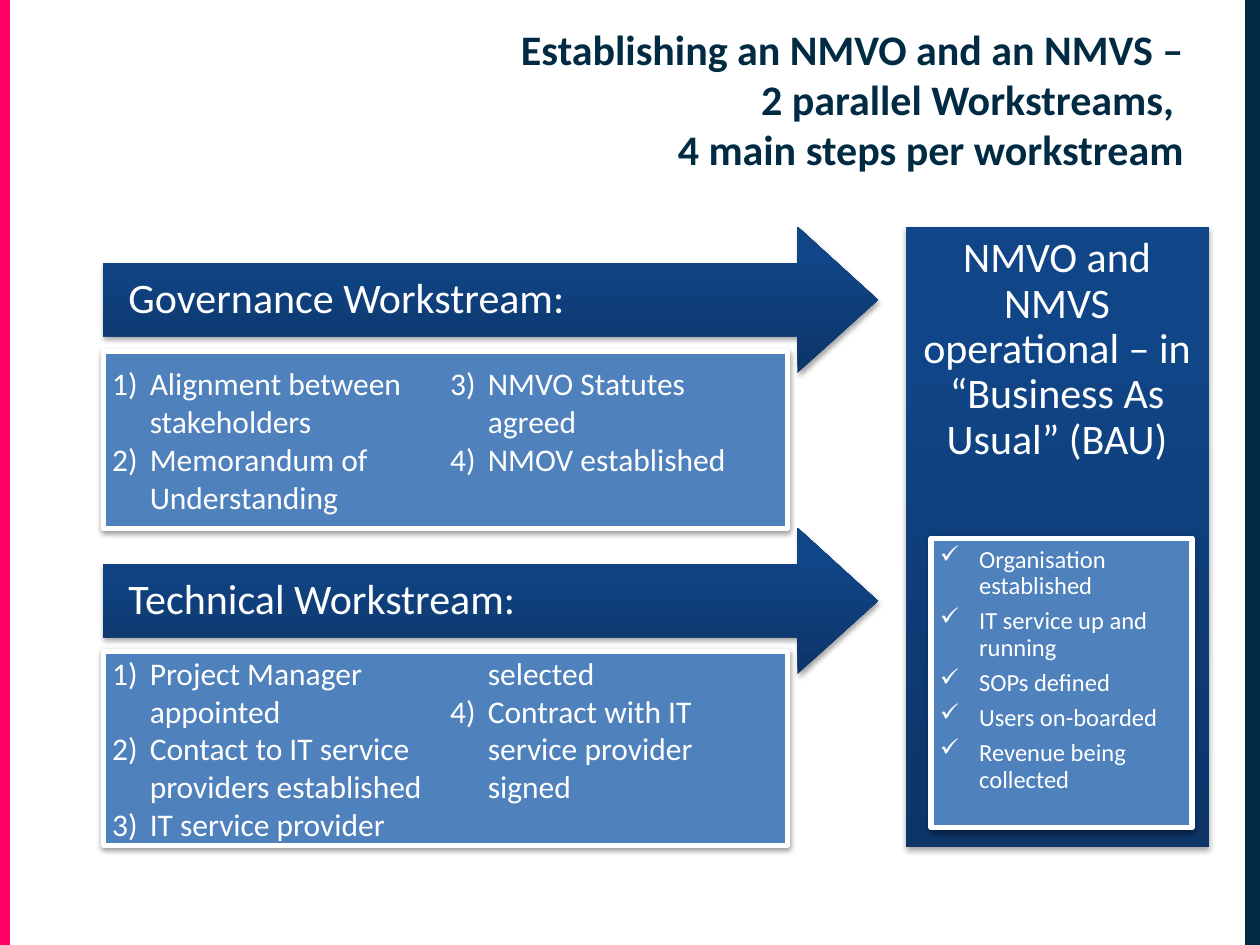
from copy import deepcopy

from lxml.etree import SubElement
from pptx import Presentation
from pptx.dml.color import RGBColor
from pptx.enum.shapes import MSO_SHAPE as Shape
from pptx.enum.text import MSO_ANCHOR as Anchor, PP_ALIGN as Align
from pptx.oxml.ns import qn
from pptx.util import Cm, Pt

TITLE = "Establishing an NMVO and an NMVS – 2 parallel Workstreams, \v4 main steps per workstream"
WORKSTREAMS = [
    {"name": "Governance Workstream:", "arrow_top": 4.57, "list_top": 7.09, "list_height": 3.56,
     "steps": ["Alignment between stakeholders", "Memorandum of Understanding",
               "NMVO Statutes agreed", "NMOV established"]},
    {"name": "Technical Workstream:", "arrow_top": 10.64, "list_top": 13.13, "list_height": 3.91,
     "steps": ["Project Manager appointed", "Contact to IT service providers established",
               "IT service provider selected", "Contract with IT service provider signed"]},
]
GOAL = "NMVO and NMVS operational – in “Business As Usual” (BAU)"
CHECKS = ["Organisation established", "IT service up and running", "SOPs defined",
          "Users on-boarded", "Revenue being collected"]

FONT = "Calibri"
NAVY, PINK, WHITE, BLUE = "002B43", "FF0066", "FFFFFF", "4F81BD"
GRADIENT = [(0, "0D3568"), (0.8, "104587"), (1, "0E458A")]
LEFT, ARROW_WIDTH, ARROW_HEIGHT, LIST_WIDTH = 2.08, 15.62, 2.95, 13.79


def color(value):
    return RGBColor.from_string(value)


def add_box(page, kind, left, top, width, height, fill=None, outlined=False):
    box = page.shapes.add_shape(kind, Cm(left), Cm(top), Cm(width), Cm(height))
    box.shadow.inherit = False
    if fill:
        box.fill.solid()
        box.fill.fore_color.rgb = color(fill)
    if outlined:
        box.line.color.rgb = color(WHITE)
        box.line.width = Pt(3)
    else:
        box.line.fill.background()
    return box


def add_shadow(box, opacity, distance):
    effects = box._element.spPr.find(qn("a:effectLst"))
    shadow = SubElement(effects, qn("a:outerShdw"), blurRad=str(Pt(3.1)),
                        dist=str(Pt(distance)), dir="5400000", rotWithShape="0")
    tint = SubElement(shadow, qn("a:srgbClr"), val="000000")
    SubElement(tint, qn("a:alpha"), val=str(opacity * 1000))


def shade(box):
    box.fill.gradient()
    box.fill.gradient_angle = 90
    stop_list = box._element.spPr.find(qn("a:gradFill")).find(qn("a:gsLst"))
    stop_list.append(deepcopy(stop_list[-1]))
    for stop, (position, value) in zip(box.fill.gradient_stops, GRADIENT):
        stop.position = position
        stop.color.rgb = color(value)
    add_shadow(box, 35, 1.8)


def write(box, lines, size, value=WHITE, bold=False, align=Align.LEFT, anchor=Anchor.TOP,
          insets=(0.18, 0.18, 0.18, 0.18), spacing=None, after=0, bullet=None, indent=0, columns=1):
    frame = box.text_frame
    frame.word_wrap = True
    frame.vertical_anchor = anchor
    frame.margin_left, frame.margin_top, frame.margin_right, frame.margin_bottom = map(Cm, insets)
    if columns > 1:
        frame._txBody.bodyPr.set("numCol", str(columns))
        frame._txBody.bodyPr.set("spcCol", str(Cm(0.2)))
    for index, line in enumerate(lines):
        para = frame.paragraphs[0] if index == 0 else frame.add_paragraph()
        para.text = line
        para.alignment = align
        para.space_after = Pt(after)
        if spacing:
            para.line_spacing = spacing
        if bullet:
            properties = para._p.get_or_add_pPr()
            properties.set("marL", str(Cm(indent)))
            properties.set("indent", str(-Cm(indent)))
            if bullet == "number":
                SubElement(properties, qn("a:buFont"), typeface=FONT)
                SubElement(properties, qn("a:buAutoNum"), type="arabicParenR")
            else:
                SubElement(properties, qn("a:buChar"), char=bullet)
        for span in para.runs:
            span.font.name = FONT
            span.font.size = Pt(size)
            span.font.bold = bold
            span.font.color.rgb = color(value)


def add_workstream(page, stream):
    steps = add_box(page, Shape.RECTANGLE, LEFT, stream["list_top"], LIST_WIDTH,
                    stream["list_height"], BLUE, outlined=True)
    add_shadow(steps, 38, 1.6)
    write(steps, stream["steps"], 18, anchor=Anchor.MIDDLE, bullet="number", indent=0.76, columns=2)

    arrow = add_box(page, Shape.RIGHT_ARROW, LEFT, stream["arrow_top"], ARROW_WIDTH, ARROW_HEIGHT)
    arrow.adjustments[0] = 0.5
    arrow.adjustments[1] = 0.55
    shade(arrow)
    write(arrow, [stream["name"]], 24, anchor=Anchor.MIDDLE, insets=(0.51, 0, 0, 0), spacing=0.9)


def add_goal(page):
    panel = add_box(page, Shape.RECTANGLE, 18.26, 4.57, 6.12, 12.5)
    shade(panel)
    write(panel, [GOAL], 24, align=Align.CENTER, insets=(0.18, 0.2, 0.2, 0.2), spacing=0.9)

    checklist = add_box(page, Shape.RECTANGLE, 18.77, 10.85, 5.26, 5.84, BLUE, outlined=True)
    add_shadow(checklist, 38, 1.6)
    write(checklist, CHECKS, 14, spacing=0.9, after=4.9, bullet="✓", indent=0.79)


def main():
    deck = Presentation()
    deck.slide_width, deck.slide_height = Cm(25.4), Cm(19.05)
    page = deck.slides.add_slide(deck.slide_layouts[5])

    add_box(page, Shape.RECTANGLE, 0, 0, 0.2, 19.05, PINK)
    add_box(page, Shape.RECTANGLE, 25.1, 0, 0.3, 19.05, NAVY)

    title = page.shapes.title
    title.left, title.top, title.width, title.height = Cm(9.91), Cm(1.19), Cm(14.2), Cm(1.6)
    write(title, [TITLE], 24, NAVY, bold=True, align=Align.RIGHT, anchor=Anchor.MIDDLE,
          insets=(0.25, 0.13, 0.25, 0.13))

    for stream in WORKSTREAMS:
        add_workstream(page, stream)
    add_goal(page)
    deck.save("out.pptx")


if __name__ == "__main__":
    main()
